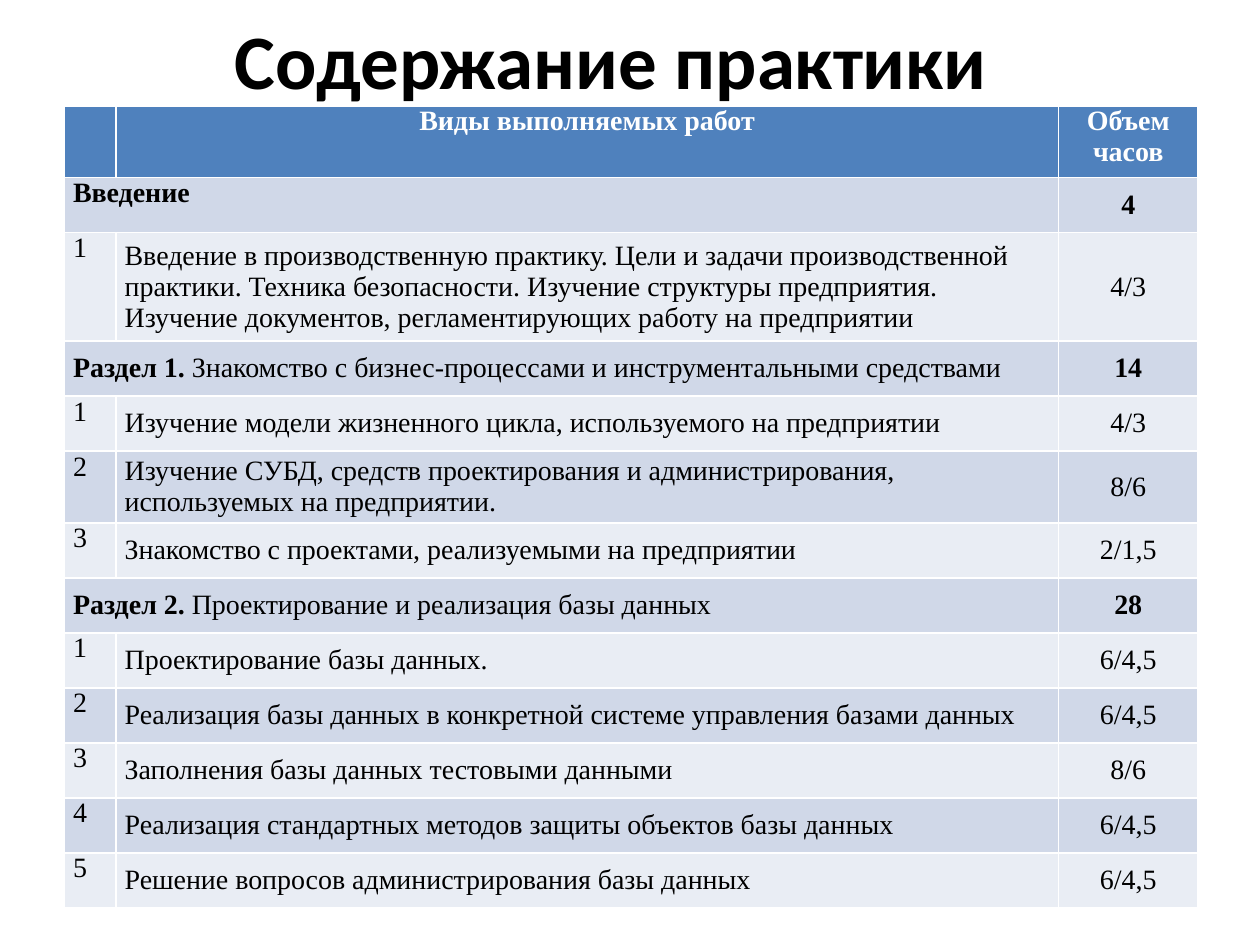
from pptx import Presentation
from pptx.dml.color import RGBColor
from pptx.enum.text import MSO_ANCHOR, PP_ALIGN
from pptx.util import Inches, Pt

TOP, MIDDLE = MSO_ANCHOR.TOP, MSO_ANCHOR.MIDDLE
LEFT, CENTER = PP_ALIGN.LEFT, PP_ALIGN.CENTER

TITLE = "Содержание практики"
HEADER = ("", "Виды выполняемых работ", "Объем часов")
SECTIONS = [
    ("Введение", "", "4", [
        ("Введение в производственную практику. Цели и задачи производственной практики. "
         "Техника безопасности. Изучение структуры предприятия. "
         "Изучение документов, регламентирующих работу на предприятии", "4/3"),
    ]),
    ("Раздел 1. ", "Знакомство с бизнес-процессами и инструментальными средствами", "14", [
        ("Изучение модели жизненного цикла, используемого на предприятии", "4/3"),
        ("Изучение СУБД, средств проектирования и администрирования, "
         "используемых на предприятии.", "8/6"),
        ("Знакомство с проектами, реализуемыми на предприятии", "2/1,5"),
    ]),
    ("Раздел 2. ", "Проектирование и реализация базы данных", "28", [
        ("Проектирование базы данных.", "6/4,5"),
        ("Реализация базы данных в конкретной системе управления базами данных", "6/4,5"),
        ("Заполнения базы данных тестовыми данными", "8/6"),
        ("Реализация стандартных методов защиты объектов базы данных", "6/4,5"),
        ("Решение вопросов администрирования базы данных", "6/4,5"),
    ]),
]
COLS = (0.41, 7.48, 1.11)
ROW_H, TALL_ROWS = 0.437, {0: 0.57, 2: 0.86, 5: 0.57}
HEAD_FILL, BANDS = "4F81BD", ("E9EDF4", "D0D8E8")
MARGINS = {"margin_left": Inches(0.07), "margin_right": Inches(0.07),
           "margin_top": 0, "margin_bottom": 0}


def rgb(value):
    """Return the colour for a hex string."""
    return RGBColor.from_string(value)


def add_run(p, text, size, name, color="000000", bold=False):
    """Add one formatted run to a paragraph."""
    r = p.add_run()
    r.text = text
    for key, value in {"size": Pt(size), "name": name, "bold": bold}.items():
        setattr(r.font, key, value)
    r.font.color.rgb = rgb(color)


def fill_cell(cell, runs, fill, align=LEFT, anchor=MIDDLE, color="000000"):
    """Write (text, bold) runs into a filled table cell."""
    for key, value in {**MARGINS, "vertical_anchor": anchor}.items():
        setattr(cell, key, value)
    cell.fill.solid()
    cell.fill.fore_color.rgb = rgb(fill)
    p = cell.text_frame.paragraphs[0]
    p.alignment = align
    for text, bold in runs:
        if text:
            add_run(p, text, 16, "Times New Roman", color, bold)


def table_rows():
    """List the body rows as (number, runs, hours)."""
    rows = []
    for bold_part, plain_part, total, works in SECTIONS:
        rows.append(("", [(bold_part, True), (plain_part, False)], total))
        for number, (work, hours) in enumerate(works, 1):
            rows.append((str(number), [(work, False)], hours))
    return rows


def add_title(s):
    """Place and format the slide title."""
    sp = s.shapes.title
    sp.left, sp.top, sp.width, sp.height = map(Inches, (0.35, 0, 9, 0.93))
    tf = sp.text_frame
    tf.vertical_anchor = MIDDLE
    p = tf.paragraphs[0]
    p.alignment = CENTER
    add_run(p, TITLE, 44, "Calibri", bold=True)


def add_hours_table(s):
    """Build the table of works and hours."""
    rows = table_rows()
    heights = [TALL_ROWS.get(i, ROW_H) for i in range(len(rows) + 1)]
    table = s.shapes.add_table(len(heights), len(COLS), Inches(0.51), Inches(0.84),
                               Inches(sum(COLS)), Inches(sum(heights))).table
    for col, width in zip(table.columns, COLS):
        col.width = Inches(width)
    for row, height in zip(table.rows, heights):
        row.height = Inches(height)
    for c, text in enumerate(HEADER):
        fill_cell(table.cell(0, c), [(text, True)], HEAD_FILL, CENTER, TOP, "FFFFFF")
    for i, (number, runs, hours) in enumerate(rows, 1):
        first, work, total = (table.cell(i, c) for c in range(len(COLS)))
        fill = BANDS[i % 2]
        if number:
            fill_cell(first, [(number, False)], fill, anchor=TOP)
            fill_cell(work, runs, fill)
        else:
            first.merge(work)
            fill_cell(first, runs, fill, anchor=TOP if i == 1 else MIDDLE)
        fill_cell(total, [(hours, not number)], fill, CENTER)


def main():
    """Build and save the slide."""
    prs = Presentation()
    prs.slide_width, prs.slide_height = Inches(10), Inches(7.5)
    s = prs.slides.add_slide(prs.slide_layouts[5])
    add_title(s)
    add_hours_table(s)
    prs.save("out.pptx")


if __name__ == "__main__":
    main()
